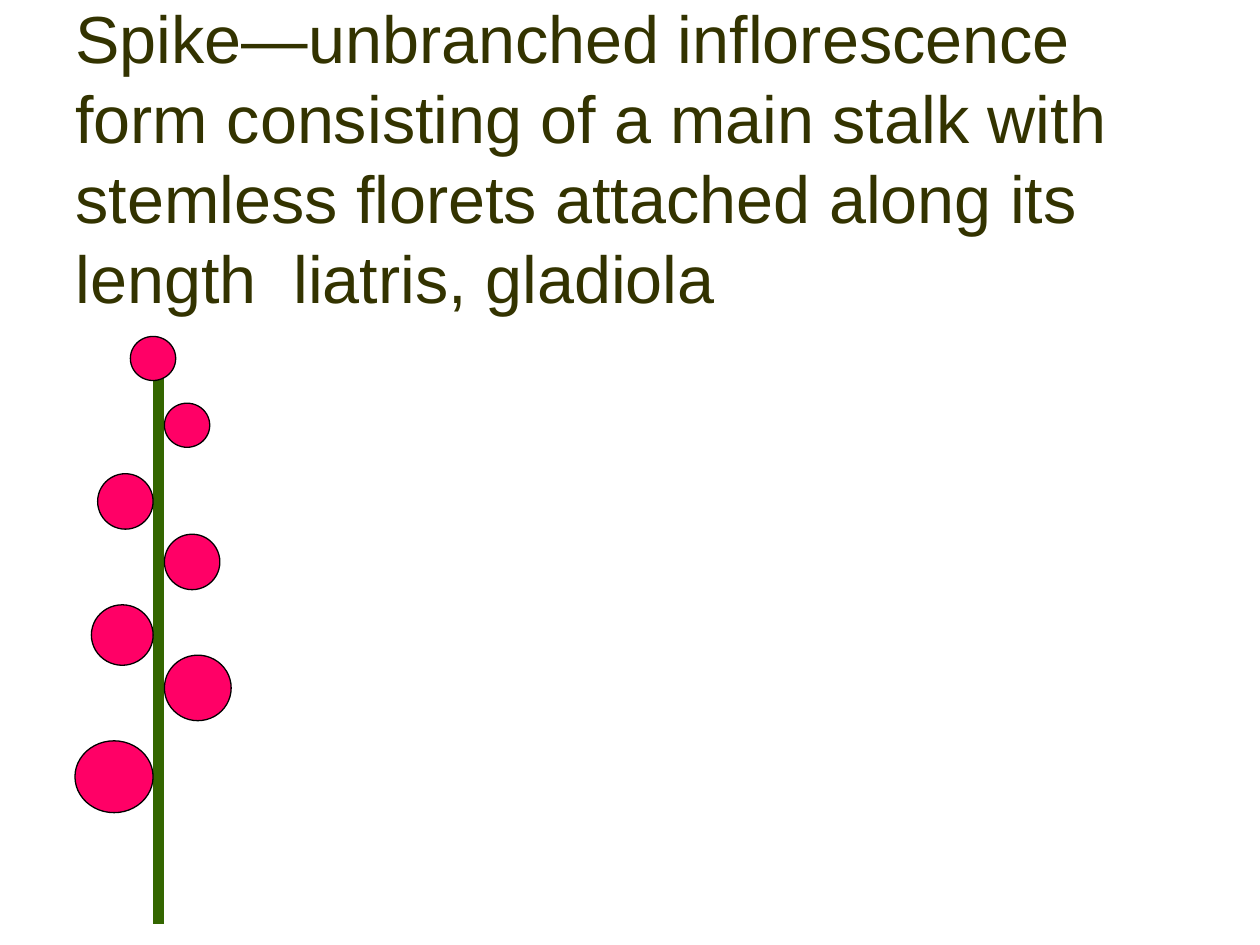
from lxml import etree
from pptx import Presentation
from pptx import util as u
from pptx.dml.color import RGBColor
from pptx.enum import shapes, text
from pptx.oxml.ns import qn

THEME = {
    "font": "Arial",
    "title_size": 38,
    "title_leading": 45.6,
    "title": RGBColor.from_string("333300"),
    "stalk": RGBColor.from_string("336600"),
    "floret": RGBColor.from_string("FF0066"),
    "outline": RGBColor.from_string("000000"),
}
TITLE = ("Spike—unbranched inflorescence form consisting of a main stalk with "
         "stemless florets attached along its length  liatris, gladiola")

STALK_X, STALK_TOP, STALK_BOTTOM = 1.26, 2.97, 7.33
STALK_HALF = 0.045
# side of the stalk, top, width, height
FLORETS = [
    ("tip", 2.67, 0.36, 0.35),
    ("right", 3.2, 0.36, 0.35),
    ("right", 4.24, 0.44, 0.44),
    ("left", 4.8, 0.49, 0.48),
    ("right", 5.2, 0.53, 0.52),
    ("left", 3.76, 0.44, 0.44),
    ("left", 5.88, 0.62, 0.57),
]


def add_title(page):
    box = page.shapes.add_textbox(*map(u.Inches, (0.5, 0.3, 9, 1.25)))
    frame = box.text_frame
    frame.word_wrap = True
    frame.vertical_anchor = text.MSO_ANCHOR.MIDDLE
    frame.margin_top, frame.margin_bottom = u.Inches(0.64), 0
    frame.text = TITLE
    para = frame.paragraphs[0]
    para.line_spacing = u.Pt(THEME["title_leading"])
    font = para.runs[0].font
    font.name, font.size = THEME["font"], u.Pt(THEME["title_size"])
    font.color.rgb = THEME["title"]


def add_stalk(spike):
    stalk = spike.shapes.add_connector(
        shapes.MSO_CONNECTOR.STRAIGHT,
        *map(u.Inches, (STALK_X, STALK_TOP, STALK_X, STALK_BOTTOM)))
    stalk.line.color.rgb = THEME["stalk"]
    stalk.line.width = u.Pt(6)
    etree.SubElement(stalk._element.spPr, qn("a:effectLst"))


def add_floret(spike, side, top, width, height):
    """Set a floret against its side of the stalk, or over the tip."""
    left = {
        "tip": STALK_X - STALK_HALF - width / 2,
        "left": STALK_X - STALK_HALF - width,
        "right": STALK_X + STALK_HALF,
    }[side]
    floret = spike.shapes.add_shape(
        shapes.MSO_SHAPE.OVAL, *map(u.Inches, (left, top, width, height)))
    floret.shadow.inherit = False
    floret.fill.solid()
    floret.fill.fore_color.rgb = THEME["floret"]
    floret.line.color.rgb = THEME["outline"]
    floret.line.width = u.Pt(0.75)


def main():
    deck = Presentation()
    deck.slide_width, deck.slide_height = u.Inches(10), u.Inches(7.5)
    page = deck.slides.add_slide(deck.slide_layouts[6])
    add_title(page)
    spike = page.shapes.add_group_shape()
    add_stalk(spike)
    for floret in FLORETS:
        add_floret(spike, *floret)
    deck.save("out.pptx")


if __name__ == "__main__":
    main()
